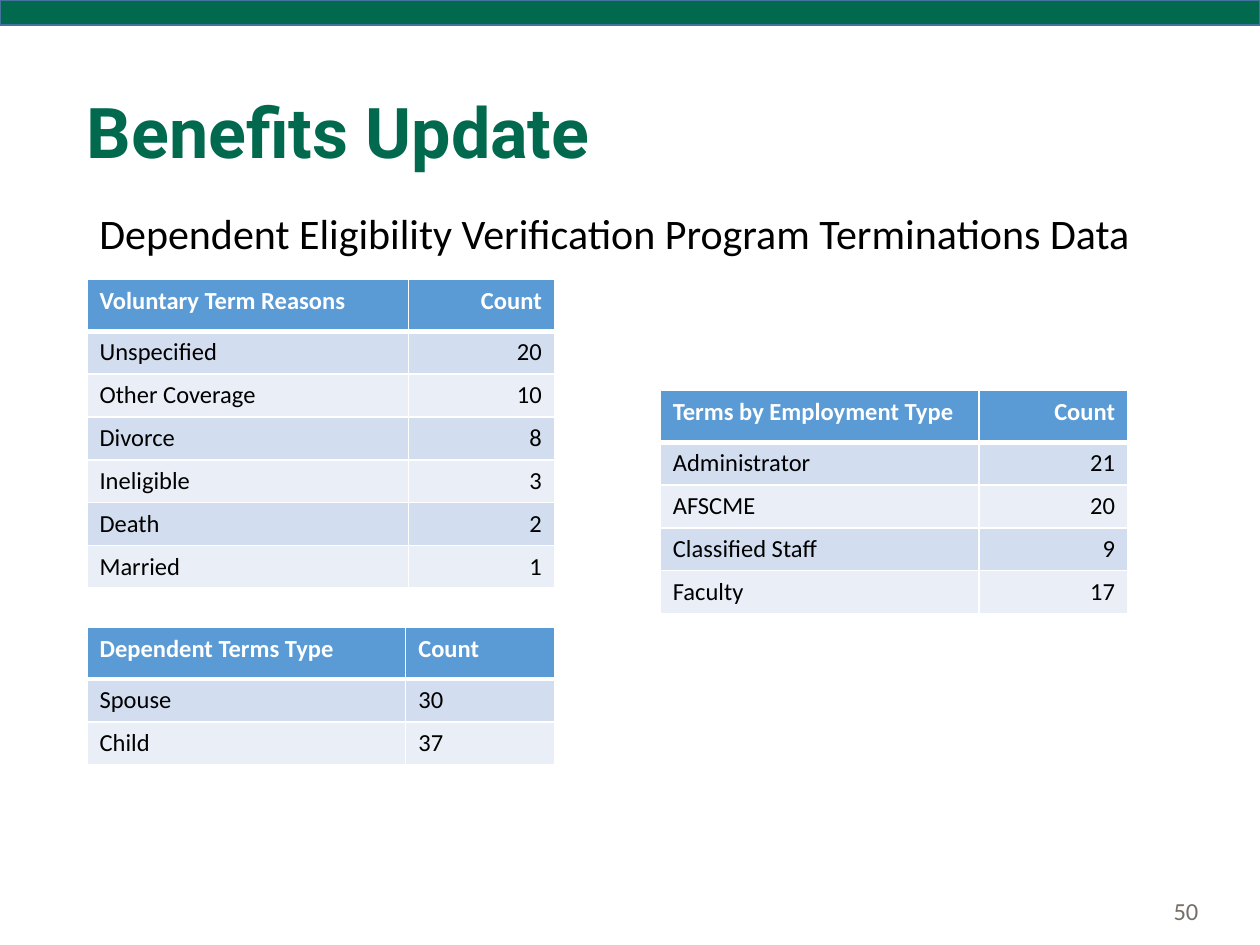
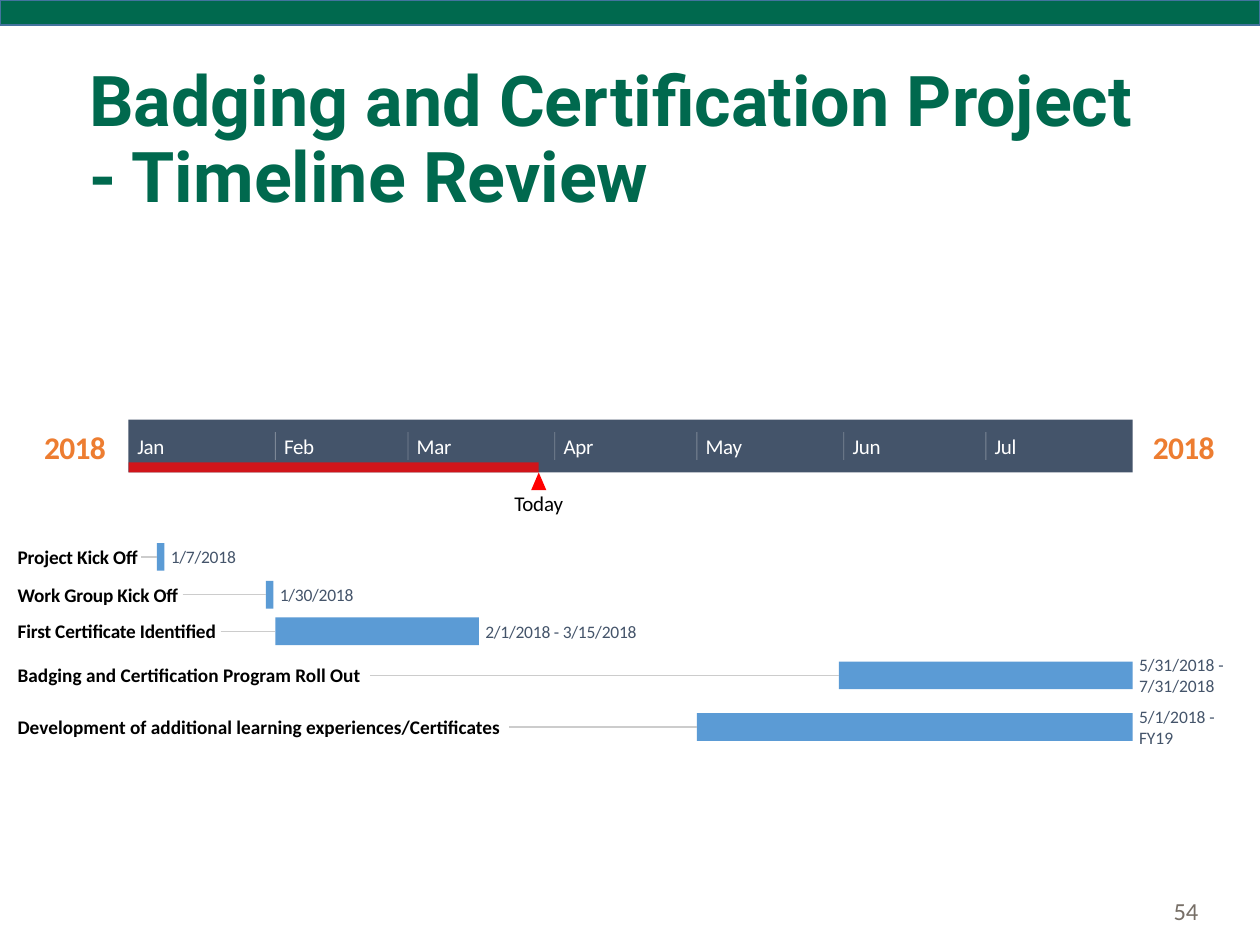
from itertools import accumulate
from lxml.etree import SubElement as Sub
from pptx import Presentation
from pptx.dml.color import RGBColor
from pptx.enum.shapes import MSO_CONNECTOR as Conn, MSO_SHAPE as Shape
from pptx.enum.text import MSO_ANCHOR as Anchor, PP_ALIGN as Align
from pptx.oxml.ns import qn
from pptx.util import Inches, Pt

GREEN = RGBColor(0x00, 0x69, 0x4E)
EDGE = RGBColor(0x43, 0x73, 0x9E)
GREY = RGBColor(0x77, 0x6F, 0x67)
BLUE = RGBColor(0x5B, 0x9B, 0xD5)
BANDS = RGBColor(0xD2, 0xDE, 0xEF), RGBColor(0xEA, 0xEF, 0xF7)
SLATE = RGBColor(0x44, 0x54, 0x6A)
ORANGE = RGBColor(0xED, 0x7D, 0x31)
RED = RGBColor(0xFF, 0x00, 0x00)
RULE = RGBColor(0xCC, 0xCC, 0xCC)
WHITE = RGBColor(0xFF, 0xFF, 0xFF)
BLACK = RGBColor(0x00, 0x00, 0x00)

WIDE, HIGH = 10, 7.5
LEFT = 0.69

TITLE = dict(size=Pt(40), name="Roboto", bold=True, color=GREEN)
LEAD = dict(size=Pt(24), color=BLACK)
PAGE = dict(size=Pt(14), color=GREY)
HEAD = dict(size=Pt(14), color=WHITE, bold=True)
CELL = dict(size=Pt(14), color=BLACK, bold=False)
YEAR = dict(size=Pt(18), color=ORANGE, bold=True, spc=-40)
MONTH = dict(size=Pt(12), color=WHITE, spc=-20)
NOW = dict(size=Pt(12), color=BLACK, spc=-10)
TASK = dict(size=Pt(11), color=BLACK, bold=True)
DATE = dict(size=Pt(10), color=SLATE)

TABLES = [
    (LEFT, 2.22, (2.55, 1.16), Align.RIGHT, [
        ("Voluntary Term Reasons", "Count"), ("Unspecified", "20"),
        ("Other Coverage", "10"), ("Divorce", "8"), ("Ineligible", "3"),
        ("Death", "2"), ("Married", "1")]),
    (LEFT, 4.98, (2.53, 1.18), Align.LEFT, [
        ("Dependent Terms Type", "Count"), ("Spouse", "30"), ("Child", "37")]),
    (5.24, 3.1, (2.53, 1.18), Align.RIGHT, [
        ("Terms by Employment Type", "Count"), ("Administrator", "21"),
        ("AFSCME", "20"), ("Classified Staff", "9"), ("Faculty", "17")]),
]
HEAD_H, ROW_H = 0.41, 0.34

MONTHS = [("Jan", 31), ("Feb", 28), ("Mar", 31), ("Apr", 30),
          ("May", 31), ("Jun", 30), ("Jul", 31)]
DAYS = sum(days for _, days in MONTHS)
TODAY = 86.6
AXIS_X, AXIS_Y, AXIS_W, AXIS_H = 1.02, 3.33, 7.97, 0.42
BAR_H, TAG_H, GAP = 0.22, 0.2, 0.05
TASKS = [
    ("Project Kick Off", 0.98, 4.42, 6, 7.6, "1/7/2018", 0.6, -10),
    ("Work Group Kick Off", 1.31, 4.72, 29, 30.6, "1/30/2018", 0.65, -10),
    ("First Certificate Identified", 1.61, 5.01, 31, 74,
     "2/1/2018 - 3/15/2018", 1.3, -10),
    ("Badging and Certification Program Roll Out", 2.8, 5.36, 150, DAYS,
     "5/31/2018 - 7/31/2018", 0.71, 0),
    ("Development of additional learning experiences/Certificates", 3.9,
     5.77, 120, DAYS, "5/1/2018 - FY19", 0.64, 0),
]


def write(frame, text, look, align=Align.LEFT, space=None):
    para = frame.paragraphs[0]
    para.alignment = align
    if space:
        para.line_spacing = space
    run = para.add_run()
    run.text = text
    for key, value in (dict(name="Calibri") | look).items():
        if key == "color":
            run.font.color.rgb = value
        elif key == "spc":
            run._r.get_or_add_rPr().set("spc", str(value))
        else:
            setattr(run.font, key, value)


def label(slide, place, text, look, align=Align.LEFT, anchor=Anchor.MIDDLE,
          wrap=False, inset=0, space=None):
    box = slide.shapes.add_textbox(*map(Inches, place))
    frame = box.text_frame
    frame.word_wrap = wrap
    frame.vertical_anchor = anchor
    for side in ("left", "right", "top", "bottom"):
        pad = inset if side in ("left", "right") else inset / 2
        setattr(frame, f"margin_{side}", Inches(pad))
    write(frame, text, look, align, space)
    return box


def fade(fill, share):
    tone = fill._xPr.find(".//" + qn("a:srgbClr"))
    Sub(tone, qn("a:alpha")).set("val", str(share * 1000))


def block(slide, place, color, kind=Shape.RECTANGLE):
    shape = slide.shapes.add_shape(kind, *map(Inches, place))
    shape.shadow.inherit = False
    shape.fill.solid()
    shape.fill.fore_color.rgb = color
    shape.line.fill.background()
    return shape


def rule(slide, x1, y1, x2, y2, color, width):
    line = slide.shapes.add_connector(
        Conn.STRAIGHT, *map(Inches, (x1, y1, x2, y2)))
    line.line.color.rgb = color
    line.line.width = Pt(width)
    Sub(line._element.spPr, qn("a:effectLst"))
    return line


def start(deck, title, x, y, page):
    slide = deck.slides.add_slide(deck.slide_layouts[6])
    label(slide, (6.61, 7.03, 3, 0.4), page, PAGE, Align.RIGHT,
          wrap=True, inset=0.1)
    band = block(slide, (0, 0, WIDE, 0.2), GREEN)
    band.line.color.rgb = EDGE
    band.line.width = Pt(1)
    label(slide, (x, y, 8.62, 1.45), title, TITLE, wrap=True,
          inset=0.1, space=0.9)
    return slide


def border(cell, row):
    props = cell._tc.get_or_add_tcPr()
    thick = {(0, "B"), (1, "T")}
    for side in "LRTB":
        line = Sub(props, qn(f"a:ln{side}"))
        line.set("w", str(Pt(3 if (row, side) in thick else 1)))
        Sub(Sub(line, qn("a:solidFill")), qn("a:srgbClr")).set("val", str(WHITE))


def grid(slide, x, y, widths, align, rows):
    high = HEAD_H + ROW_H * (len(rows) - 1)
    table = slide.shapes.add_table(
        len(rows), len(widths),
        *map(Inches, (x, y, sum(widths), high))).table
    for col, width in zip(table.columns, widths):
        col.width = Inches(width)
    for r, row in enumerate(rows):
        table.rows[r].height = Inches(ROW_H if r else HEAD_H)
        for c, text in enumerate(row):
            cell = table.cell(r, c)
            border(cell, r)
            cell.fill.solid()
            cell.fill.fore_color.rgb = BANDS[(r - 1) % 2] if r else BLUE
            write(cell.text_frame, text, CELL if r else HEAD,
                  align if c else Align.LEFT)


def day_x(day):
    return AXIS_X + AXIS_W * day / DAYS


def axis(slide):
    for x in (0.35, 9.15):
        label(slide, (x, 3.39, 0.49, 0.31), "2018", YEAR, Align.CENTER)
    block(slide, (AXIS_X, AXIS_Y, AXIS_W, AXIS_H), SLATE)
    now, base = day_x(TODAY), AXIS_Y + AXIS_H
    past = block(slide, (AXIS_X, base - 0.08, now - AXIS_X, 0.08), RED)
    fade(past.fill, 75)
    block(slide, (now - 0.06, base, 0.12, 0.14), RED, Shape.ISOSCELES_TRIANGLE)
    label(slide, (now - 0.25, base + 0.14, 0.5, 0.2), "Today", NOW, Align.CENTER)
    starts = accumulate((days for _, days in MONTHS), initial=0)
    for (name, _), day in zip(MONTHS, starts):
        x = day_x(day)
        if day:
            tick = rule(slide, x, 3.43, x, 3.65, WHITE, 0.5)
            fade(tick.line.fill, 30)
        label(slide, (x + 0.07, 3.44, 0.4, 0.2), name, MONTH)


def task(slide, name, width, mid, first, last, dates, span, spc):
    x, end = day_x(first), day_x(last)
    tag = label(slide, (0.14, mid - TAG_H / 2, width, TAG_H), name,
                TASK | dict(spc=spc))
    bar = block(slide, (x, mid - BAR_H / 2, end - x, BAR_H), BLUE)
    link = rule(slide, 0.14 + width, mid, x, mid, RULE, 0.75)
    link.begin_connect(tag, 3)
    link.end_connect(bar, 1)
    wrap = last == DAYS
    high = 0.34 if wrap else 0.17
    label(slide, (end + GAP, mid - high / 2, span, high), dates,
          DATE | dict(spc=spc), wrap=wrap)


def main():
    deck = Presentation()
    deck.slide_width, deck.slide_height = Inches(WIDE), Inches(HIGH)

    slide = start(deck, "Benefits Update", 0.59, 0.35, "50")
    label(slide, (LEFT, 1.64, 8.62, 4.76),
          "Dependent Eligibility Verification Program Terminations Data",
          LEAD, anchor=Anchor.TOP, wrap=True, inset=0.1, space=0.9)
    for item in TABLES:
        grid(slide, *item)

    slide = start(deck, "Badging and Certification Project - Timeline Review",
                  0.61, 0.4, "54")
    axis(slide)
    for item in TASKS:
        task(slide, *item)

    deck.save("out.pptx")


if __name__ == "__main__":
    main()
